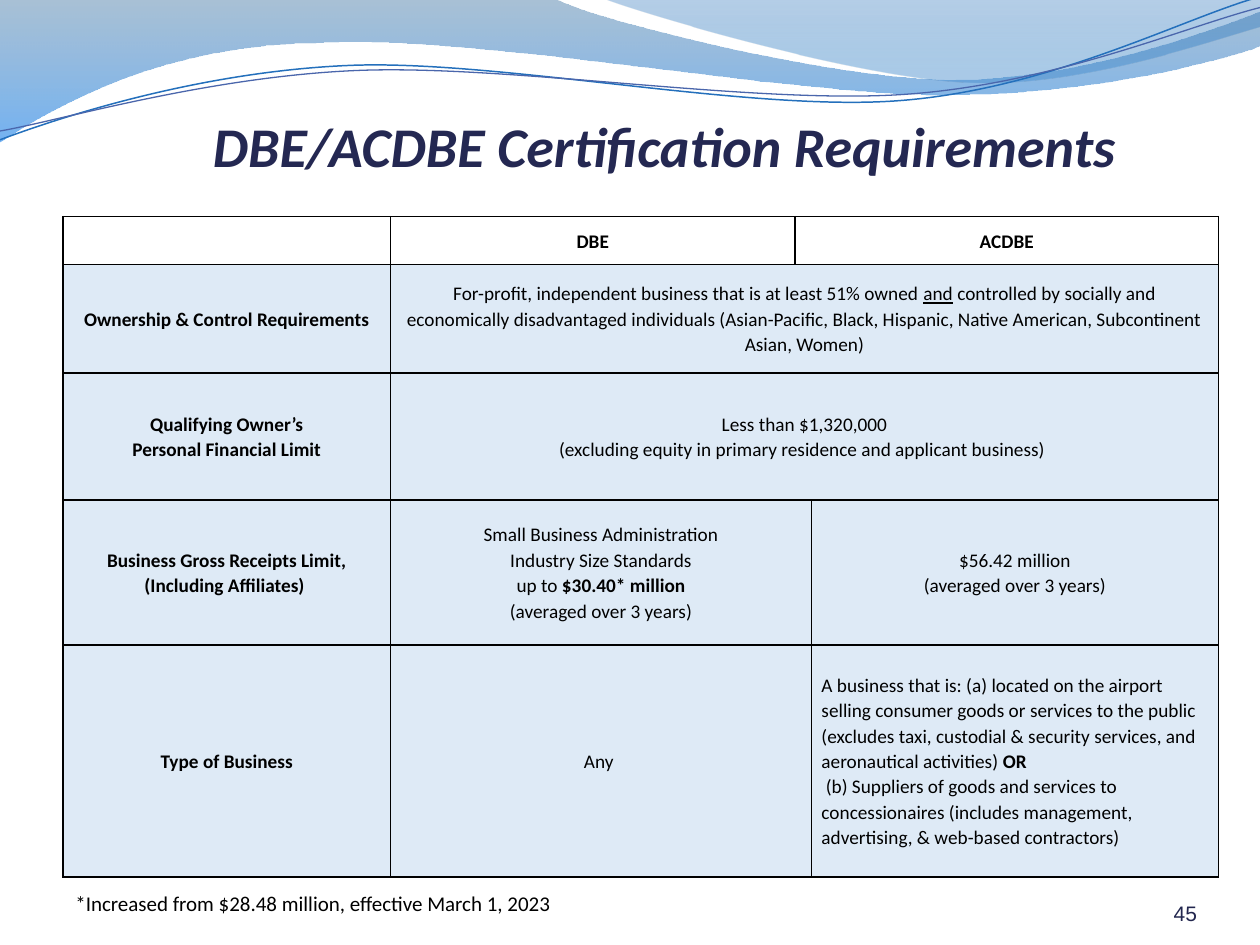
from dataclasses import dataclass
from lxml import etree
from pptx import Presentation
from pptx.dml.color import RGBColor
from pptx.enum.text import MSO_ANCHOR, PP_ALIGN
from pptx.oxml import parse_xml
from pptx.oxml.ns import nsdecls, qn
from pptx.util import Inches, Pt

LEFT, CENTER, RIGHT = PP_ALIGN.LEFT, PP_ALIGN.CENTER, PP_ALIGN.RIGHT
MIDDLE, BOTTOM = MSO_ANCHOR.MIDDLE, MSO_ANCHOR.BOTTOM


@dataclass(frozen=True)
class Theme:
    title: str = "242852"
    number: str = "22264E"
    ink: str = "000000"
    cell: str = "DEEAF6"
    font: str = "Calibri"
    number_font: str = "Arial"
    title_size: int = 32
    note_size: int = 12
    table_size: int = 11
    band_top: tuple = ((0, "4075A3", 45), (100, "0073E7", 55))
    band_right: tuple = ((0, "0B5EB1", 30), (80, "438CCC", 45))
    wave_upper: str = "2470BC"
    wave_lower: str = "4A66AC"


THEME = Theme()


def add_span(para, text, size, color=THEME.ink, font=THEME.font, style=""):
    span = para.add_run()
    span.text = text
    span.font.name = font
    span.font.size = Pt(size)
    span.font.color.rgb = RGBColor.from_string(color)
    span.font.bold = "b" in style
    span.font.italic = "i" in style
    span.font.underline = "u" in style


def add_curve(page, start, segments, closed):
    points = [
        (Inches(x), Inches(y))
        for segment in segments
        for x, y in zip(segment[::2], segment[1::2])
    ]
    builder = page.shapes.build_freeform(Inches(start[0]), Inches(start[1]), scale=1.0)
    builder.add_line_segments(points, close=closed)
    curve = builder.convert_to_shape()
    curve.shadow.inherit = False
    lines = iter(list(curve._element.iter(qn("a:lnTo"))))
    for segment in segments:
        steps = [next(lines) for _ in segment[::2]]
        if len(steps) == 3:
            bezier = etree.Element(qn("a:cubicBezTo"))
            steps[0].addprevious(bezier)
            for step in steps:
                bezier.append(step[0])
                step.getparent().remove(step)
    return curve


deck = Presentation()
deck.slide_width, deck.slide_height = Inches(10), Inches(7.5)
page = deck.slides.add_slide(deck.slide_layouts[6])

bands = [
    ((0, -0.01), [
        (4.4, -0.01), (4.76, 0.17, 6.64, 0.63, 7.58, 0.63),
        (8.53, 0.63, 9.58, 0.26, 10, 0.09), (10.01, 0.36),
        (9.83, 0.44, 8.7, 0.76, 7.46, 0.75), (6.22, 0.75, 3.82, 0.28, 2.57, 0.34),
        (1.29, 0.35, 0.46, 0.83, -0.01, 1.13), (0, -0.01),
    ], THEME.band_top),
    ((4.79, -0.01), [
        (5.09, 0.11, 6.82, 0.62, 7.69, 0.65),
        (8.56, 0.69, 9.61, 0.32, 10, 0.21), (10, 0), (4.79, -0.01),
    ], THEME.band_right),
]
for start, segments, stops in bands:
    band = add_curve(page, start, segments, True)
    band.line.fill.background()
    band.fill.gradient()
    gradient = band.fill._xPr.find(qn("a:gradFill"))
    stop_xml = "".join(
        f'<a:gs pos="{place * 1000}"><a:srgbClr val="{color}">'
        f'<a:alpha val="{alpha * 1000}"/></a:srgbClr></a:gs>'
        for place, color, alpha in stops
    )
    gradient.getparent().replace(gradient, parse_xml(
        f'<a:gradFill {nsdecls("a")} rotWithShape="1"><a:gsLst>{stop_xml}</a:gsLst>'
        '<a:lin ang="5400000" scaled="0"/></a:gradFill>'
    ))

waves = [
    ((0, 1.11), [
        (0.48, 0.93, 1.58, 0.57, 2.77, 0.52), (3.95, 0.47, 5.93, 0.89, 7.13, 0.8),
        (8.33, 0.71, 9.38, 0.15, 9.98, -0.02),
    ], THEME.wave_upper, 0.85),
    ((0, 1.04), [
        (0.47, 0.96, 1.64, 0.61, 2.83, 0.56), (4.03, 0.51, 5.97, 0.83, 7.17, 0.75),
        (8.36, 0.67, 9.41, 0.21, 10, 0.06),
    ], THEME.wave_lower, 0.75),
]
for start, segments, color, width in waves:
    wave = add_curve(page, start, segments, False)
    wave.fill.background()
    wave.line.color.rgb = RGBColor.from_string(color)
    wave.line.width = Pt(width)

labels = [
    ((8.67, 6.95, 0.83, 0.4), 0, BOTTOM, RIGHT,
     ("45", THEME.note_size, THEME.number, THEME.number_font)),
    ((0.55, 0.75, 9.45, 0.67), 0, BOTTOM, CENTER,
     ("DBE/ACDBE Certification Requirements", THEME.title_size, THEME.title, THEME.font, "bi")),
    ((0.5, 7.02, 9, 0.3), 0.1, MIDDLE, LEFT,
     ("*Increased from $28.48 million, effective March 1, 2023", THEME.note_size)),
]
for place, inset, anchor, align, words in labels:
    box = page.shapes.add_textbox(*map(Inches, place))
    frame = box.text_frame
    frame.word_wrap = True
    frame.vertical_anchor = anchor
    frame.margin_left = frame.margin_right = Inches(inset)
    frame.margin_top = frame.margin_bottom = 0
    frame.paragraphs[0].alignment = align
    add_span(frame.paragraphs[0], *words)

column_widths = [2.6, 3.21, 0.13, 3.23]
row_heights = [0.38, 0.86, 1.01, 1.15, 1.84]
table = page.shapes.add_table(
    len(row_heights), len(column_widths),
    Inches(0.5), Inches(1.72), Inches(sum(column_widths)), Inches(sum(row_heights)),
).table
table.first_row = table.horz_banding = False
for column, width in zip(table.columns, column_widths):
    column.width = Inches(width)
for row, height in zip(table.rows, row_heights):
    row.height = Inches(height)

for row, first, last in [(0, 2, 3), (1, 1, 3), (2, 1, 3), (3, 1, 2), (4, 1, 2)]:
    table.cell(row, first).merge(table.cell(row, last))

for row in range(len(row_heights)):
    for column in range(len(column_widths)):
        cell = table.cell(row, column)
        cell.vertical_anchor = MIDDLE
        cell.margin_left = cell.margin_right = Inches(0.08)
        cell.margin_top = cell.margin_bottom = 0
        if row:
            cell.fill.solid()
            cell.fill.fore_color.rgb = RGBColor.from_string(THEME.cell)
        else:
            cell.fill.background()
        properties = cell._tc.get_or_add_tcPr()
        for index, side in enumerate(("lnL", "lnR", "lnT", "lnB")):
            border = etree.Element(qn(f"a:{side}"), w=str(Pt(1)))
            paint = etree.SubElement(border, qn("a:solidFill"))
            etree.SubElement(paint, qn("a:srgbClr"), val=THEME.ink)
            properties.insert(index, border)

contents = {
    (0, 1): [[("DBE", "b")]],
    (0, 2): [[("ACDBE", "b")]],
    (1, 0): [[("Ownership & Control Requirements", "b")]],
    (1, 1): [[
        ("For-profit, independent business that is at least 51% owned ", ""), ("and", "u"),
        (" controlled by socially and economically disadvantaged individuals (Asian-Pacific, "
         "Black, Hispanic, Native American, Subcontinent Asian, Women)", ""),
    ]],
    (2, 0): [[("Qualifying Owner’s", "b")], [("Personal Financial Limit", "b")]],
    (2, 1): [[("Less than $1,320,000", "")],
             [("(excluding equity in primary residence and applicant business) ", "")]],
    (3, 0): [[("Business Gross Receipts Limit, (Including Affiliates) ", "b")]],
    (3, 1): [[("Small Business Administration", "")], [("Industry Size Standards", "")],
             [("up to ", ""), ("$30.40* million", "b")], [("(averaged over 3 years)", "")]],
    (3, 3): [[("$56.42 million", "")], [("(averaged over 3 years)", "")]],
    (4, 0): [[("Type of Business", "b")]],
    (4, 1): [[("Any ", "")]],
    (4, 3): [
        [("A business that is: (a) located on the airport selling consumer goods or services to "
          "the public (excludes taxi, custodial & security services, and aeronautical "
          "activities) ", ""), ("OR", "b")],
        [(" (b) Suppliers of goods and services to concessionaires (includes management, "
          "advertising, & web-based contractors)", "")],
    ],
}
for position, paragraphs in contents.items():
    frame = table.cell(*position).text_frame
    for index, spans in enumerate(paragraphs):
        para = frame.add_paragraph() if index else frame.paragraphs[0]
        para.alignment = LEFT if position == (4, 3) else CENTER
        para.line_spacing = 1.07
        for text, style in spans:
            add_span(para, text, THEME.table_size, style=style)

deck.save("out.pptx")
